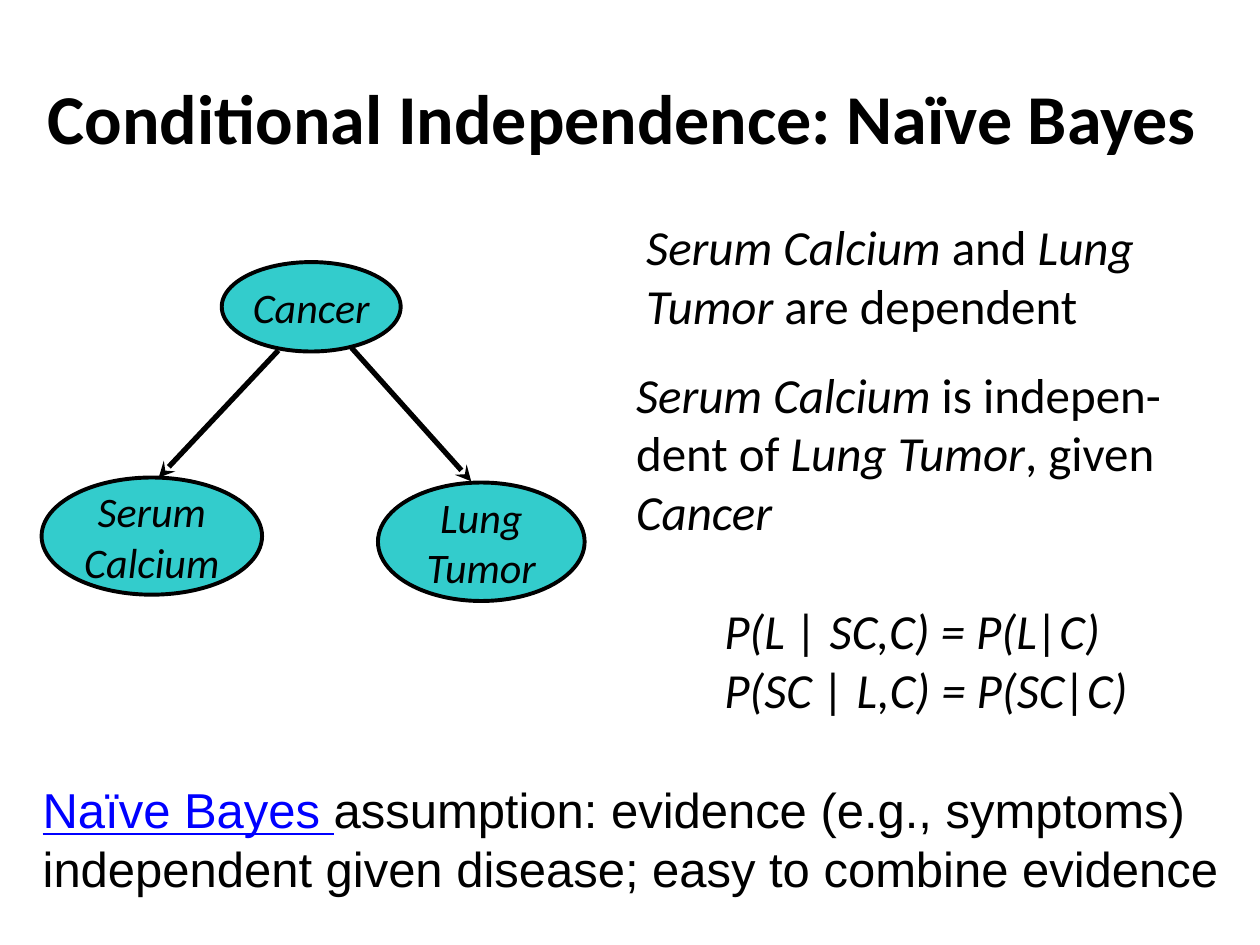
from lxml import etree
from pptx import Presentation
from pptx.dml.color import RGBColor
from pptx.enum import shapes, text
from pptx.oxml.ns import qn
from pptx.util import Inches, Pt

COLORS = {"ink": "000000", "node": "33CCCC", "term": "0000FF"}


def rgb(name):
    return RGBColor.from_string(COLORS[name])


def write(frame, paragraphs, align=text.PP_ALIGN.LEFT, **style):
    """Fill a frame; each paragraph is a list of (words, style changes)."""
    for index, runs in enumerate(paragraphs):
        paragraph = frame.paragraphs[0] if index == 0 else frame.add_paragraph()
        paragraph.alignment = align
        for words, changes in runs:
            look = {"font": "Calibri", "size": 28, "color": "ink", **style, **changes}
            run = paragraph.add_run()
            run.text = words
            run.font.name = look["font"]
            run.font.size = Pt(look["size"])
            run.font.color.rgb = rgb(look["color"])
            run.font.bold = look.get("bold", False)
            run.font.italic = look.get("italic", False)
            run.font.underline = look.get("underline", False)


class Diagram:
    """The current slide and the style of its elements."""

    node_line = Pt(2.25)
    arrow_line = Pt(3)

    def __init__(self, slide):
        self.slide = slide

    def label(self, box, paragraphs, wrap=True, anchor=text.MSO_ANCHOR.TOP, **style):
        label = self.slide.shapes.add_textbox(*map(Inches, box))
        label.text_frame.word_wrap = wrap
        label.text_frame.vertical_anchor = anchor
        write(label.text_frame, paragraphs, **style)

    def node(self, box, *lines):
        node = self.slide.shapes.add_shape(shapes.MSO_SHAPE.OVAL, *map(Inches, box))
        node.shadow.inherit = False
        node.fill.solid()
        node.fill.fore_color.rgb = rgb("node")
        node.line.color.rgb = rgb("ink")
        node.line.width = self.node_line
        node.text_frame.word_wrap = False
        node.text_frame.vertical_anchor = text.MSO_ANCHOR.MIDDLE
        write(node.text_frame, [[(line, {})] for line in lines],
              align=text.PP_ALIGN.CENTER, size=24, italic=True)

    def arrow(self, start, end):
        arrow = self.slide.shapes.add_connector(
            shapes.MSO_CONNECTOR.STRAIGHT, *map(Inches, start + end))
        arrow.line.color.rgb = rgb("ink")
        arrow.line.width = self.arrow_line
        etree.SubElement(arrow.line._get_or_add_ln(), qn("a:tailEnd"), type="stealth")
        etree.SubElement(arrow._element.spPr, qn("a:effectLst"))


def main():
    deck = Presentation()
    deck.slide_width, deck.slide_height = Inches(10), Inches(7.5)
    diagram = Diagram(deck.slides.add_slide(deck.slide_layouts[6]))
    italic = {"italic": True}

    # Title
    diagram.label((0, 0.3, 10, 1.25), [[("Conditional Independence: Naïve Bayes ", {})]],
                  anchor=text.MSO_ANCHOR.MIDDLE, align=text.PP_ALIGN.CENTER,
                  size=40, bold=True)

    # Network: one cause, two symptoms
    diagram.node((1.76, 2.08, 1.42, 0.71), "Cancer")
    diagram.arrow((2.79, 2.76), (3.74, 3.82))
    diagram.arrow((2.21, 2.78), (1.26, 3.79))
    diagram.node((3, 3.83, 1.64, 0.94), "Lung", "Tumor")
    diagram.node((0.33, 3.79, 1.75, 0.93), "Serum", "Calcium")

    # Dependence statements
    diagram.label((5.03, 1.67, 4.72, 1.03), [[
        ("Serum Calcium", italic), (" and ", {}),
        ("Lung Tumor", italic), (" are dependent", {})]])
    diagram.label((4.95, 2.84, 4.72, 1.5), [[
        ("Serum Calcium", italic), (" is indepen-dent of ", {}),
        ("Lung Tumor", italic), (", given ", {}), ("Cancer", italic)]])

    # Formulas
    diagram.label((5.65, 4.72, 3.53, 1.04), [
        [("P(L | SC,C) = P(L|C)", {})],
        [("P(SC | L,C) = P(SC|C)", {})]], wrap=False, italic=True)

    # Conclusion
    diagram.label((0.24, 6.14, 9.58, 1.04), [[
        ("Naïve Bayes ", {"color": "term", "underline": True}),
        ("assumption: evidence (e.g., symptoms) independent given disease; "
         "easy to combine evidence", {})]], font="Arial")

    deck.save("out.pptx")


if __name__ == "__main__":
    main()
